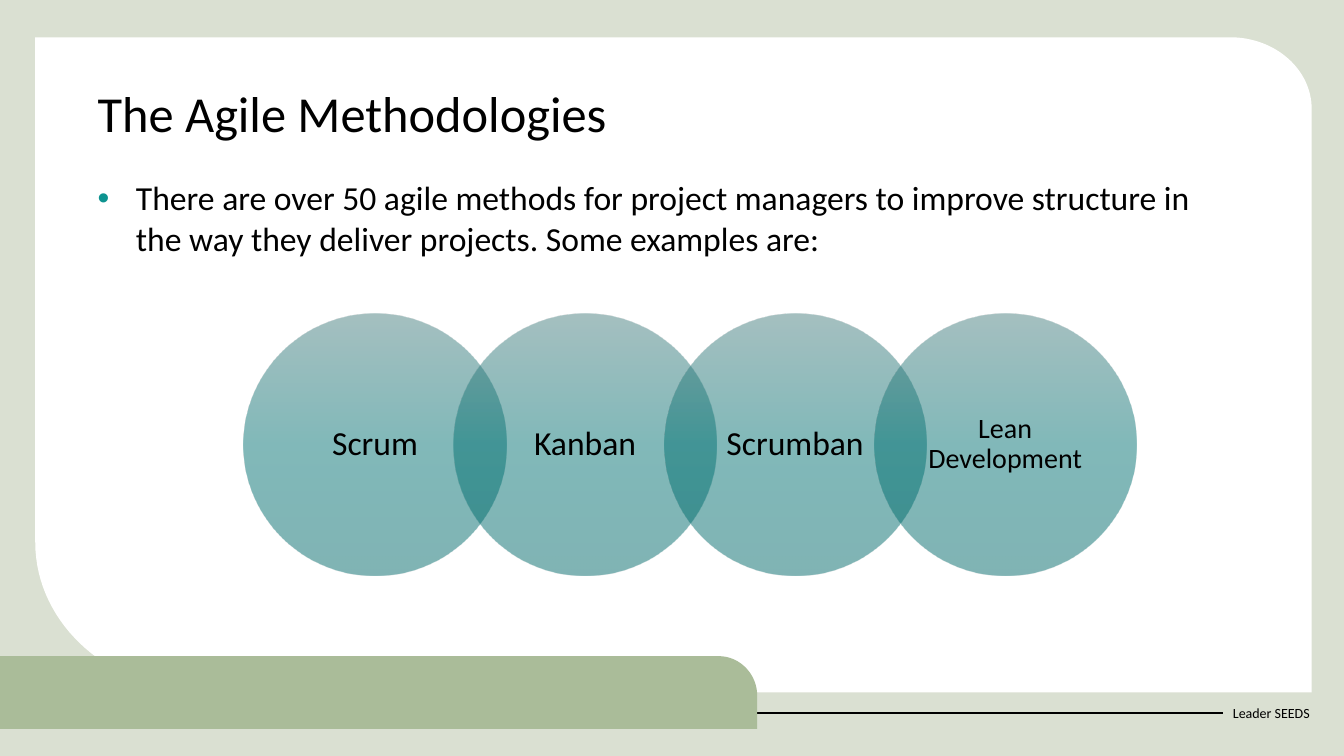
"""Builds the slide on agile methodologies with four overlapping circles."""
import lxml.etree
import pptx
import pptx.dml.color
import pptx.enum.shapes
import pptx.enum.text
import pptx.oxml
import pptx.oxml.ns
import pptx.util

Inches, Pt = pptx.util.Inches, pptx.util.Pt
SHAPE = pptx.enum.shapes.MSO_SHAPE
ALIGN = pptx.enum.text.PP_ALIGN
ANCHOR = pptx.enum.text.MSO_ANCHOR
qn = pptx.oxml.ns.qn

TITLE = "The Agile Methodologies"
INTRO = ("There are over 50 agile methods for project managers to improve "
         "structure in the way they deliver projects. Some examples are:")
FOOTER = "Leader SEEDS"
METHODS = [("Scrum", 24), ("Kanban", 24), ("Scrumban", 24), ("Lean Development", 20)]
COLORS = {"back": "DAE0D2", "panel": "FFFFFF", "band": "AABC99",
          "text": "000000", "bullet": "0D9390"}
CIRCLE_STOPS = [(0, "4B8081"), (50, "037273"), (100, "006869")]
FONT = "Calibri"
WIDTH, HEIGHT = 13.33, 7.5
CIRCLE_TOP, CIRCLE_SIZE = 3.11, 2.6
FIRST_LEFT, LAST_LEFT = 2.42, 8.67

PANEL = [(0.35, 0.37), (12.2, 0.37),
         ((12.65, 0.37), (13.01, 0.69), (13.01, 1.08)),
         (13.01, 6.87), (2.05, 6.87),
         ((1.11, 6.87), (0.35, 6.2), (0.35, 5.38))]
BAND = [(0, 7.23), (0, 6.51), (7.13, 6.51),
        ((7.34, 6.51), (7.51, 6.69), (7.51, 6.9)), (7.51, 7.23)]


def rgb(name):
    return pptx.dml.color.RGBColor.from_string(COLORS[name])


def paint(sp, color):
    sp.shadow.inherit = False
    sp.fill.solid()
    sp.fill.fore_color.rgb = rgb(color)
    sp.line.fill.background()


def bezier(start, c1, c2, end, steps=32):
    for i in range(1, steps + 1):
        t = i / steps
        weights = ((1 - t) ** 3, 3 * t * (1 - t) ** 2, 3 * t * t * (1 - t), t ** 3)
        yield tuple(sum(w * pt[axis] for w, pt in zip(weights, (start, c1, c2, end)))
                    for axis in (0, 1))


def add_outline(s, outline, color):
    points = []
    for part in outline:
        if len(part) == 3:
            points.extend(bezier(points[-1], *part))
        else:
            points.append(part)
    corners = [(Inches(x), Inches(y)) for x, y in points]
    builder = s.shapes.build_freeform(*corners[0], scale=1.0)
    builder.add_line_segments(corners[1:], close=True)
    paint(builder.convert_to_shape(), color)


def write(sp, text, size, anchor=ANCHOR.TOP):
    tf = sp.text_frame
    tf.word_wrap = True
    tf.vertical_anchor = anchor
    p = tf.paragraphs[0]
    p.text = text
    p.font.name, p.font.size = FONT, Pt(size)
    p.font.color.rgb = rgb("text")
    return p


def add_text(s, box, text, size, anchor=ANCHOR.TOP):
    return write(s.shapes.add_textbox(*map(Inches, box)), text, size, anchor)


def add_bullet(p, indent):
    pPr = p._p.get_or_add_pPr()
    pPr.set("marL", str(Inches(indent)))
    pPr.set("indent", str(-Inches(indent)))
    color = lxml.etree.Element(qn("a:buClr"))
    lxml.etree.SubElement(color, qn("a:srgbClr"), val=COLORS["bullet"])
    font = lxml.etree.Element(qn("a:buFont"), typeface="Arial")
    char = lxml.etree.Element(qn("a:buChar"), char="•")
    for i, element in enumerate((color, font, char)):
        pPr.insert(i, element)


def add_circle(s, left, text, size):
    box = (left, CIRCLE_TOP, CIRCLE_SIZE, CIRCLE_SIZE)
    sp = s.shapes.add_shape(SHAPE.OVAL, *map(Inches, box))
    sp.shadow.inherit = False
    sp.line.fill.background()
    sp.fill.background()
    stops = "".join(
        f'<a:gs pos="{pos * 1000}"><a:srgbClr val="{color}">'
        '<a:alpha val="50000"/></a:srgbClr></a:gs>' for pos, color in CIRCLE_STOPS)
    gradient = pptx.oxml.parse_xml(
        f'<a:gradFill {pptx.oxml.ns.nsdecls("a")} rotWithShape="1">'
        f'<a:gsLst>{stops}</a:gsLst><a:lin ang="5400000" scaled="0"/></a:gradFill>')
    spPr = sp._element.spPr
    spPr.replace(spPr.find(qn("a:noFill")), gradient)
    tf = sp.text_frame
    tf.margin_left = tf.margin_right = Inches(0.14)
    tf.margin_top = tf.margin_bottom = Inches(0.03)
    p = write(sp, text, size, ANCHOR.MIDDLE)
    p.alignment, p.line_spacing = ALIGN.CENTER, 0.9


def main():
    prs = pptx.Presentation()
    prs.slide_width, prs.slide_height = Inches(WIDTH), Inches(HEIGHT)
    s = prs.slides.add_slide(prs.slide_layouts[6])

    back = s.shapes.add_shape(SHAPE.RECTANGLE, 0, 0, prs.slide_width, prs.slide_height)
    paint(back, "back")
    add_outline(s, PANEL, "panel")
    add_text(s, (12.13, 6.87, 1.01, 0.4), FOOTER, 10, ANCHOR.MIDDLE)
    rule = s.shapes.add_connector(pptx.enum.shapes.MSO_CONNECTOR.STRAIGHT,
                                  *map(Inches, (0, 7.07, 12.13, 7.07)))
    rule.line.color.rgb, rule.line.width = rgb("text"), Pt(1.5)
    lxml.etree.SubElement(rule._element.spPr, qn("a:effectLst"))
    add_outline(s, BAND, "band")

    add_text(s, (0.87, 0.83, 11.59, 0.88), TITLE, 36).line_spacing = 0.9
    add_bullet(add_text(s, (0.87, 1.71, 11.22, 0.91), INTRO, 24), 0.38)

    step = (LAST_LEFT - FIRST_LEFT) / (len(METHODS) - 1)
    for i, (name, size) in enumerate(METHODS):
        add_circle(s, FIRST_LEFT + i * step, name, size)
    prs.save("out.pptx")


if __name__ == "__main__":
    main()
